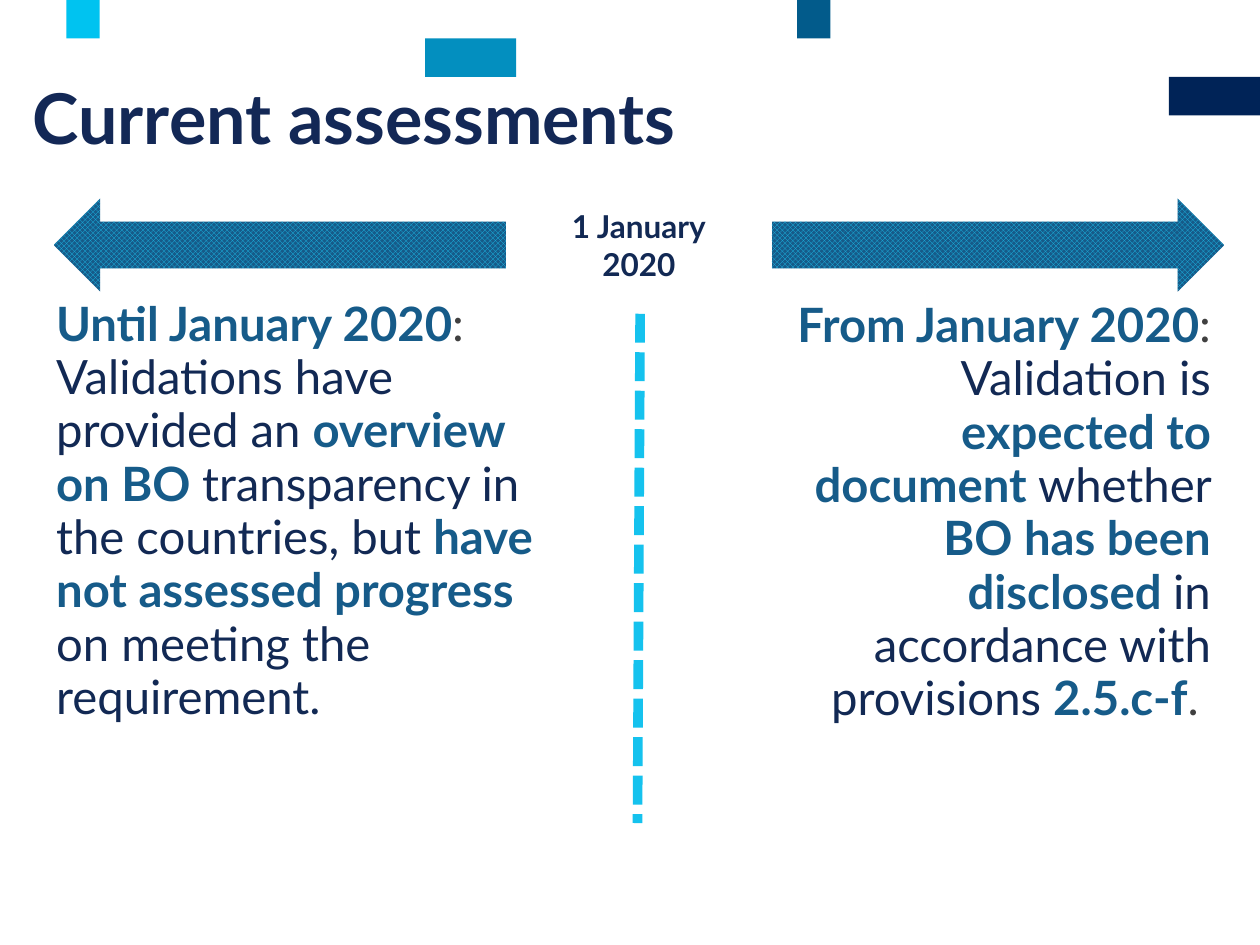
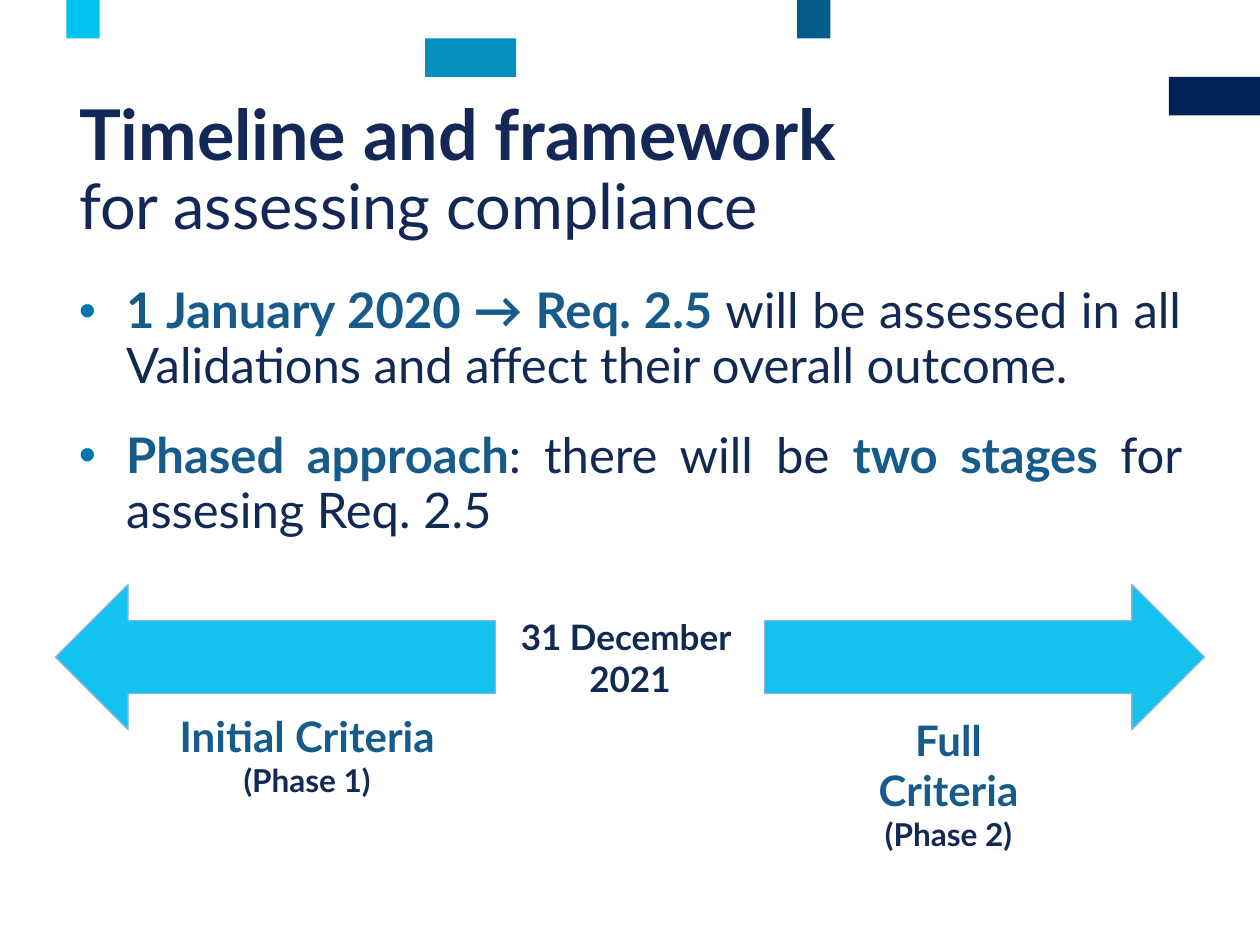
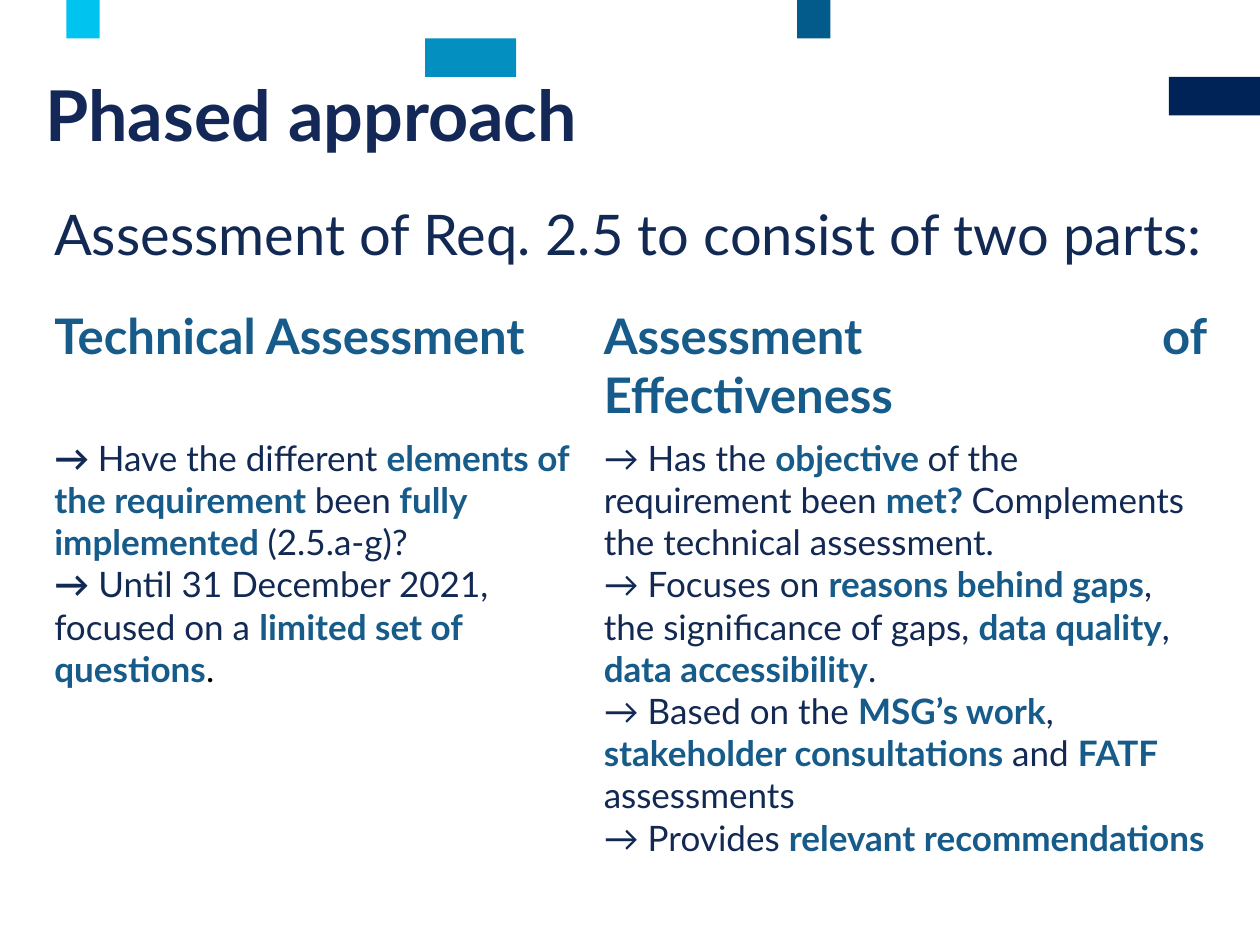
from pptx import Presentation
from pptx.dml.color import RGBColor
from pptx.enum.dml import MSO_LINE, MSO_PATTERN
from pptx.enum.shapes import MSO_CONNECTOR, MSO_SHAPE
from pptx.enum.text import MSO_ANCHOR, MSO_AUTO_SIZE, PP_ALIGN
from pptx.oxml.ns import qn
from pptx.util import Pt
from lxml.etree import SubElement

FONT = "Lato"
COLORS = {
    "title": "132856", "text": "122954", "strong": "165B89", "grey": "404040",
    "black": "000100", "bullet": "0076AF", "cyan": "15C2EE", "trellis": "1CC0EE",
    "outline": "85B5DF", "band_navy": "002357", "band_blue": "025B8B",
    "band_teal": "038FBF", "band_cyan": "00C3F0",
}
PLAIN, DARK, STRONG = ("text", False), ("text", True), ("strong", True)
GREY, BLACK = ("grey", False), ("black", False)
BANDS = [
    ("band_navy", 668, 44, 52), ("band_blue", 455.5, 0, 19),
    ("band_teal", 243, 22, 52), ("band_cyan", 38, 0, 19),
]
BAND_HEIGHT = 22


def rgb(name):
    """Return the named colour."""
    return RGBColor.from_string(COLORS[name])


def set_font(r, size, color, bold):
    """Format one run."""
    r.font.name, r.font.size, r.font.bold = FONT, Pt(size), bold
    r.font.color.rgb = rgb(color)


def write_paragraph(p, runs, size, align=PP_ALIGN.LEFT, spacing=1.0, after=0):
    """Fill a paragraph with (style, text) runs."""
    p.alignment, p.line_spacing, p.space_after = align, spacing, Pt(after)
    for (color, bold), text in runs:
        r = p.add_run()
        r.text = text
        set_font(r, size, color, bold)


def write(tf, paragraphs, size, **layout):
    """Fill a text frame with paragraphs of runs and return them."""
    for i, runs in enumerate(paragraphs):
        p = tf.add_paragraph() if i else tf.paragraphs[0]
        write_paragraph(p, runs, size, **layout)
    return tf.paragraphs


def indent(p, left, first=0):
    """Set the left margin and first-line indent of a paragraph."""
    pPr = p._p.get_or_add_pPr()
    pPr.set("marL", str(Pt(left)))
    pPr.set("indent", str(Pt(first)))
    return pPr


def add_bullet(p, left):
    """Give a paragraph a hanging round bullet."""
    pPr = indent(p, left, -left)
    color = SubElement(SubElement(pPr, qn("a:buClr")), qn("a:srgbClr"))
    color.set("val", COLORS["bullet"])
    SubElement(pPr, qn("a:buFont")).set("typeface", "Arial")
    SubElement(pPr, qn("a:buChar")).set("char", "•")


def add_text(s, x, y, w, h, anchor=MSO_ANCHOR.TOP):
    """Add a wrapping text box and return its text frame."""
    tf = s.shapes.add_textbox(Pt(x), Pt(y), Pt(w), Pt(h)).text_frame
    tf.word_wrap, tf.vertical_anchor = True, anchor
    return tf


def add_title(s, x, y, w, h, title, subtitle=""):
    """Place the title placeholder, with a lighter second line if given."""
    sp = s.shapes.title
    sp.left, sp.top, sp.width, sp.height = Pt(x), Pt(y), Pt(w), Pt(h)
    tf = sp.text_frame
    tf.auto_size, tf.vertical_anchor = MSO_AUTO_SIZE.NONE, MSO_ANCHOR.TOP
    p = tf.paragraphs[0]
    p.text = f"{title}\v{subtitle}" if subtitle else title
    p.alignment, p.line_spacing = PP_ALIGN.LEFT, 0.89
    for r, size, bold in zip(p.runs, (40, 36), (True, False)):
        set_font(r, size, "title", bold)


def add_shape(s, kind, x, y, w, h):
    """Add a shape without shadow or outline."""
    sp = s.shapes.add_shape(kind, Pt(x), Pt(y), Pt(w), Pt(h))
    sp.shadow.inherit = False
    sp.line.fill.background()
    return sp


def add_bands(prs, s):
    """Build the coloured bands and hand them to the slide master."""
    for color, x, y, w in BANDS:
        sp = add_shape(s, MSO_SHAPE.RECTANGLE, x, y, w, BAND_HEIGHT)
        sp.fill.solid()
        sp.fill.fore_color.rgb = rgb(color)
        prs.slide_master.shapes.element.append(sp.element)


def add_timeline(s, x, y, w, h, arrow_w, label, size):
    """Place two outward arrows around a date and return the arrows."""
    left = add_shape(s, MSO_SHAPE.LEFT_ARROW, x, y, arrow_w, h)
    right = add_shape(s, MSO_SHAPE.RIGHT_ARROW, x + w - arrow_w, y, arrow_w, h)
    tf = add_text(s, x + arrow_w, y, w - 2 * arrow_w, h, MSO_ANCHOR.MIDDLE)
    write(tf, [[(DARK, line)] for line in label], size, align=PP_ALIGN.CENTER)
    return left, right


def add_divider(s, x, y, w, h):
    """Draw the dashed line between the two periods."""
    line = s.shapes.add_connector(
        MSO_CONNECTOR.STRAIGHT, Pt(x + w), Pt(y), Pt(x), Pt(y + h))
    line.line.color.rgb = rgb("cyan")
    line.line.width, line.line.dash_style = Pt(5.5), MSO_LINE.SQUARE_DOT
    SubElement(line.element.spPr, qn("a:effectLst"))


def add_period(s, x, y, w, h, runs, align):
    """Describe one period in an indented paragraph."""
    tf = add_text(s, x, y, w, h)
    p, = write(tf, [runs], 27, align=align, spacing=0.94, after=12)
    indent(p, 25)


def add_phase(s, x, y, w, h, name, phase):
    """Label one phase below its arrow."""
    tf = add_text(s, x, y, w, h)
    write_paragraph(tf.paragraphs[0], [(STRONG, name)], 24, PP_ALIGN.CENTER)
    write_paragraph(tf.add_paragraph(), [(DARK, phase)], 18, PP_ALIGN.CENTER)


def add_comparison(s, x, y, widths, heights, headings, details):
    """Add the table of headings above their details."""
    frame = s.shapes.add_table(
        2, len(widths), Pt(x), Pt(y), Pt(sum(widths)), Pt(sum(heights)))
    table = frame.table
    table.first_row = table.horz_banding = False
    for row, height in zip(table.rows, heights):
        row.height = Pt(height)
    for i, width in enumerate(widths):
        table.columns[i].width = Pt(width)
        head, body = table.cell(0, i), table.cell(1, i)
        head.fill.background()
        body.fill.background()
        write(head.text_frame, [[(STRONG, headings[i])]], 28,
              align=PP_ALIGN.JUSTIFY, after=12)
        write(body.text_frame, details[i], 20)


def build_assessments(s):
    """Build the slide on current assessments."""
    add_title(s, 11.5, 44.6, 644, 52.6, "Current assessments")
    add_period(s, 421, 167.8, 278, 320, [
        (STRONG, "From January 2020"), (GREY, ": "), (PLAIN, "Validation is "),
        (STRONG, "expected to document "), (PLAIN, "whether "),
        (STRONG, "BO has been disclosed "),
        (PLAIN, "in accordance with provisions "), (STRONG, "2.5.c-f"), (GREY, ". "),
    ], PP_ALIGN.RIGHT)
    add_period(s, 0, 167, 318, 292, [
        (STRONG, "Until January 2020"), (GREY, ": "),
        (PLAIN, "Validations have provided an "), (STRONG, "overview on BO "),
        (PLAIN, "transparency in the countries, but "),
        (STRONG, "have not assessed progress "), (PLAIN, "on meeting the requirement."),
    ], PP_ALIGN.LEFT)
    for sp in add_timeline(s, 30.6, 113.4, 669, 53.3, 258.5, ["1 January", "2020"], 18):
        sp.fill.patterned()
        sp.fill.pattern = MSO_PATTERN.TRELLIS
        sp.fill.fore_color.rgb = rgb("trellis")
        sp.fill.back_color.rgb = rgb("strong")
    add_divider(s, 364.3, 179.3, 1.5, 291)


def build_framework(s):
    """Build the slide on the timeline and framework."""
    add_title(s, 38, 54, 644, 52.6, "Timeline and framework ", "for assessing compliance")
    tf = add_text(s, 38, 159, 644, 282)
    points = write(tf, [
        [(STRONG, "1 January 2020 → Req. 2.5 "),
         (PLAIN, "will be assessed in all Validations and affect their overall outcome.")],
        [(STRONG, "Phased approach"), (PLAIN, ": there will be "),
         (STRONG, "two stages "), (PLAIN, "for assesing Req. 2.5")],
    ], 28, align=PP_ALIGN.JUSTIFY, spacing=0.94, after=12)
    points[1].space_before = Pt(7.5)
    for p in points:
        add_bullet(p, 27)
    for sp in add_timeline(s, 31.7, 334, 656.6, 83, 251.3, ["31 December ", "2021"], 20):
        sp.fill.solid()
        sp.fill.fore_color.rgb = rgb("cyan")
        sp.line.color.rgb = rgb("outline")
        sp.line.width = Pt(0.75)
    add_phase(s, 90, 402.5, 171, 58, "Initial Criteria", "(Phase 1)")
    add_phase(s, 474.5, 404.6, 135, 90, "Full Criteria", "(Phase 2)")


def build_phased(s):
    """Build the slide on the two parts of the assessment."""
    add_title(s, 18.7, 43.2, 644, 60, "Phased approach")
    tf = add_text(s, 23.8, 113.8, 684, 47.5)
    write(tf, [[(PLAIN, "Assessment of Req. 2.5 to consist of two parts:")]], 32,
          align=PP_ALIGN.JUSTIFY, spacing=0.94, after=12)
    technical = [
        [(DARK, "→ "), (PLAIN, "Have the different "),
         (STRONG, "elements of the requirement "), (PLAIN, "been"),
         (STRONG, " fully implemented "), (PLAIN, "(2.5.a-g)?")],
        [(DARK, "→"), (PLAIN, " Until 31 December 2021, focused on a "),
         (STRONG, "limited set of questions"), (BLACK, ".")],
    ]
    effectiveness = [
        [(PLAIN, "→ Has the "), (STRONG, "objective "),
         (PLAIN, "of the requirement been "), (STRONG, "met? "),
         (PLAIN, "Complements the technical assessment.")],
        [(PLAIN, "→ Focuses on "), (STRONG, "reasons behind gaps"),
         (PLAIN, ", the significance of gaps, "), (STRONG, "data quality"),
         (PLAIN, ", "), (STRONG, "data accessibility"), (PLAIN, ".")],
        [(PLAIN, "→ Based on the "), (STRONG, "MSG’s work"), (PLAIN, ", "),
         (STRONG, "stakeholder consultations "), (PLAIN, "and "),
         (STRONG, "FATF "), (PLAIN, "assessments")],
        [(PLAIN, "→ Provides "), (STRONG, "relevant recommendations")],
    ]
    add_comparison(s, 23.8, 171.4, (314, 358.6), (43.2, 285),
                   ("Technical Assessment ", "Assessment of Effectiveness"),
                   (technical, effectiveness))


def main():
    """Build and save the presentation."""
    prs = Presentation()
    prs.slide_width, prs.slide_height = Pt(720), Pt(540)
    title_only = prs.slide_layouts[5]
    for build in (build_assessments, build_framework, build_phased):
        build(prs.slides.add_slide(title_only))
    add_bands(prs, prs.slides[0])
    prs.save("out.pptx")


if __name__ == "__main__":
    main()
